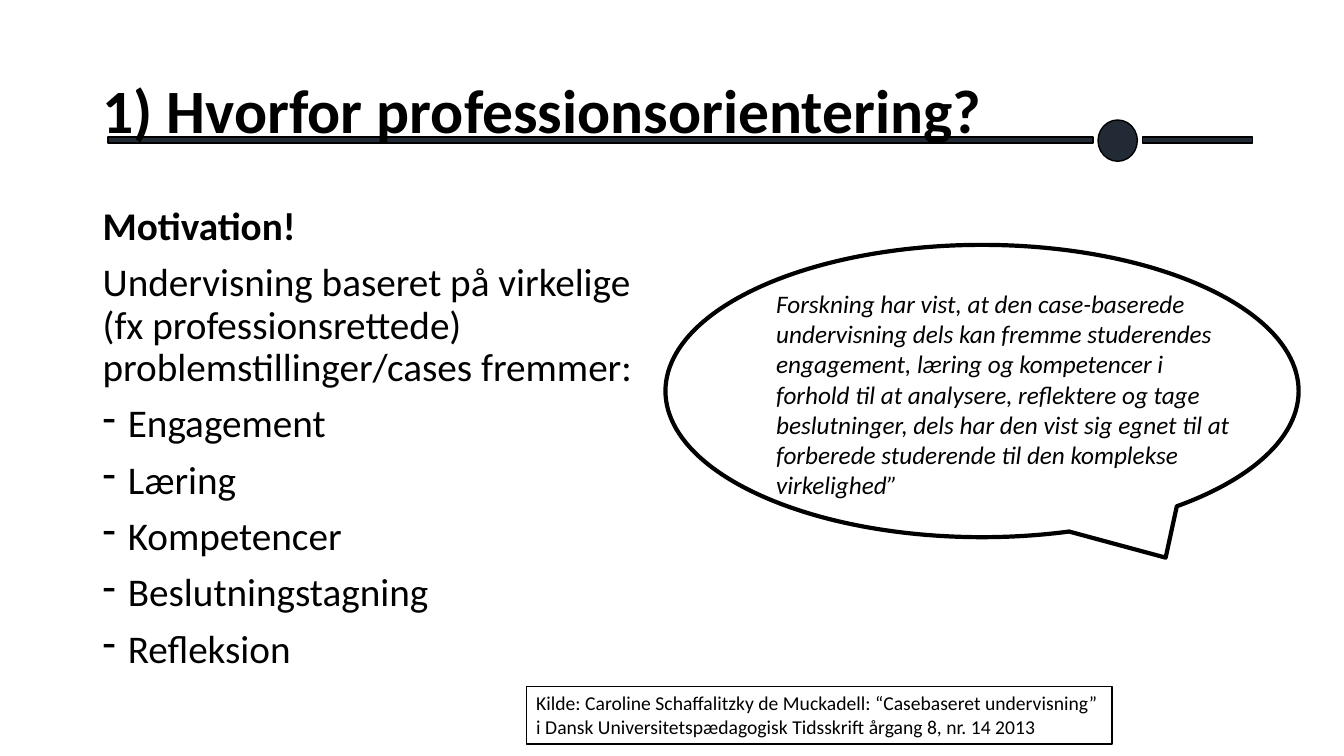
"""Build a slide on why teaching should be oriented towards professions."""
from lxml.etree import SubElement
from pptx import Presentation
from pptx.dml.color import RGBColor
from pptx.enum.shapes import MSO_SHAPE
from pptx.enum.text import MSO_ANCHOR, MSO_AUTO_SIZE, PP_ALIGN
from pptx.oxml.ns import qn
from pptx.util import Pt

PX = 9144
FONT = "Calibri"
BLACK, WHITE, NAVY = "000000", "FFFFFF", "222A35"
BENEFITS = ["Engagement", "Læring", "Kompetencer", "Beslutningstagning", "Refleksion"]
QUOTE = (
    "Forskning har vist, at den case-baserede undervisning dels kan fremme "
    "studerendes engagement, læring og kompetencer i forhold til at analysere, "
    "reflektere og tage beslutninger, dels har den vist sig egnet til at "
    "forberede studerende til den komplekse virkelighed”"
)
SOURCE = (
    "Kilde: Caroline Schaffalitzky de Muckadell: “Casebaseret undervisning” "
    "i Dansk Universitetspædagogisk Tidsskrift årgang 8, nr. 14 2013"
)


def color(hex_code):
    """Turn a hex string into a colour."""
    return RGBColor.from_string(hex_code)


def box(*lengths):
    """Turn pixel lengths into EMU."""
    return [n * PX for n in lengths]


def add_run(p, text, size, bold=False, italic=False):
    """Add one formatted run to a paragraph."""
    r = p.add_run()
    r.text = text
    r.font.name, r.font.size = FONT, Pt(size)
    r.font.bold, r.font.italic = bold, italic
    r.font.color.rgb = color(BLACK)


def add_text(s, x, y, w, h, grow=False):
    """Add a wrapping text box and return its text frame."""
    tf = s.shapes.add_textbox(*box(x, y, w, h)).text_frame
    tf.word_wrap = True
    tf.auto_size = MSO_AUTO_SIZE.SHAPE_TO_FIT_TEXT if grow else MSO_AUTO_SIZE.NONE
    return tf


def add_outlined(s, kind, x, y, w, h, fill=None, width=1):
    """Add a preset shape with a black outline and an optional fill."""
    sp = s.shapes.add_shape(kind, *box(x, y, w, h))
    sp.shadow.inherit = False
    if fill:
        sp.fill.solid()
        sp.fill.fore_color.rgb = color(fill)
    else:
        sp.fill.background()
    sp.line.color.rgb = color(BLACK)
    sp.line.width = Pt(width)
    return sp


def add_body_paragraph(tf, first=False):
    """Add a body paragraph with the common spacing."""
    p = tf.paragraphs[0] if first else tf.add_paragraph()
    p.line_spacing, p.space_before = 0.9, Pt(10)
    return p


def add_dash(p):
    """Give a paragraph a hanging dash bullet."""
    pPr = p._p.get_or_add_pPr()
    pPr.set("marL", str(25 * PX))
    pPr.set("indent", str(-25 * PX))
    SubElement(pPr, qn("a:buFontTx"))
    SubElement(pPr, qn("a:buChar")).set("char", "-")


def add_body(s):
    """Add the motivation text and the list of benefits."""
    tf = add_text(s, 92, 200, 594, 476)
    p = add_body_paragraph(tf, first=True)
    p.alignment = PP_ALIGN.JUSTIFY
    add_run(p, "Motivation!", 28, bold=True)
    p = add_body_paragraph(tf)
    add_run(p, "Undervisning baseret på virkelige", 28)
    p.add_line_break()
    add_run(p, "(fx professionsrettede) problemstillinger/cases fremmer:", 28)
    for benefit in BENEFITS:
        p = add_body_paragraph(tf)
        add_dash(p)
        add_run(p, benefit, 28)


def add_title(s):
    """Add the heading over its rule and dot."""
    add_outlined(s, MSO_SHAPE.RECTANGLE, 107, 136, 977, 6, NAVY)
    add_outlined(s, MSO_SHAPE.OVAL, 1089, 119, 39, 41, NAVY)
    add_outlined(s, MSO_SHAPE.RECTANGLE, 1133, 136, 109, 6, NAVY)
    tf = add_text(s, 92, 40, 1150, 145)
    tf.vertical_anchor = MSO_ANCHOR.MIDDLE
    p = tf.paragraphs[0]
    p.line_spacing = 0.9
    add_run(p, "1) Hvorfor professionsorientering?", 44, bold=True)


def add_quote(s):
    """Add the quotation inside a speech bubble."""
    tf = add_text(s, 760, 281, 482, 222, grow=True)
    add_run(tf.paragraphs[0], QUOTE, 18, italic=True)
    bubble = add_outlined(s, MSO_SHAPE.OVAL_CALLOUT, 660, 243, 628, 290, width=3)
    bubble.adjustments[0], bubble.adjustments[1] = 0.29, 0.57


def add_source(s):
    """Add the boxed reference."""
    sp = add_outlined(s, MSO_SHAPE.RECTANGLE, 522, 681, 581, 57, WHITE)
    tf = sp.text_frame
    tf.word_wrap = True
    tf.auto_size = MSO_AUTO_SIZE.SHAPE_TO_FIT_TEXT
    tf.vertical_anchor = MSO_ANCHOR.TOP
    p = tf.paragraphs[0]
    p.alignment = PP_ALIGN.LEFT
    add_run(p, SOURCE, 14)


def main():
    """Build and save the slide."""
    prs = Presentation()
    prs.slide_width, prs.slide_height = box(1333, 750)
    s = prs.slides.add_slide(prs.slide_layouts[6])
    add_body(s)
    add_title(s)
    add_quote(s)
    add_source(s)
    prs.save("out.pptx")


if __name__ == "__main__":
    main()
